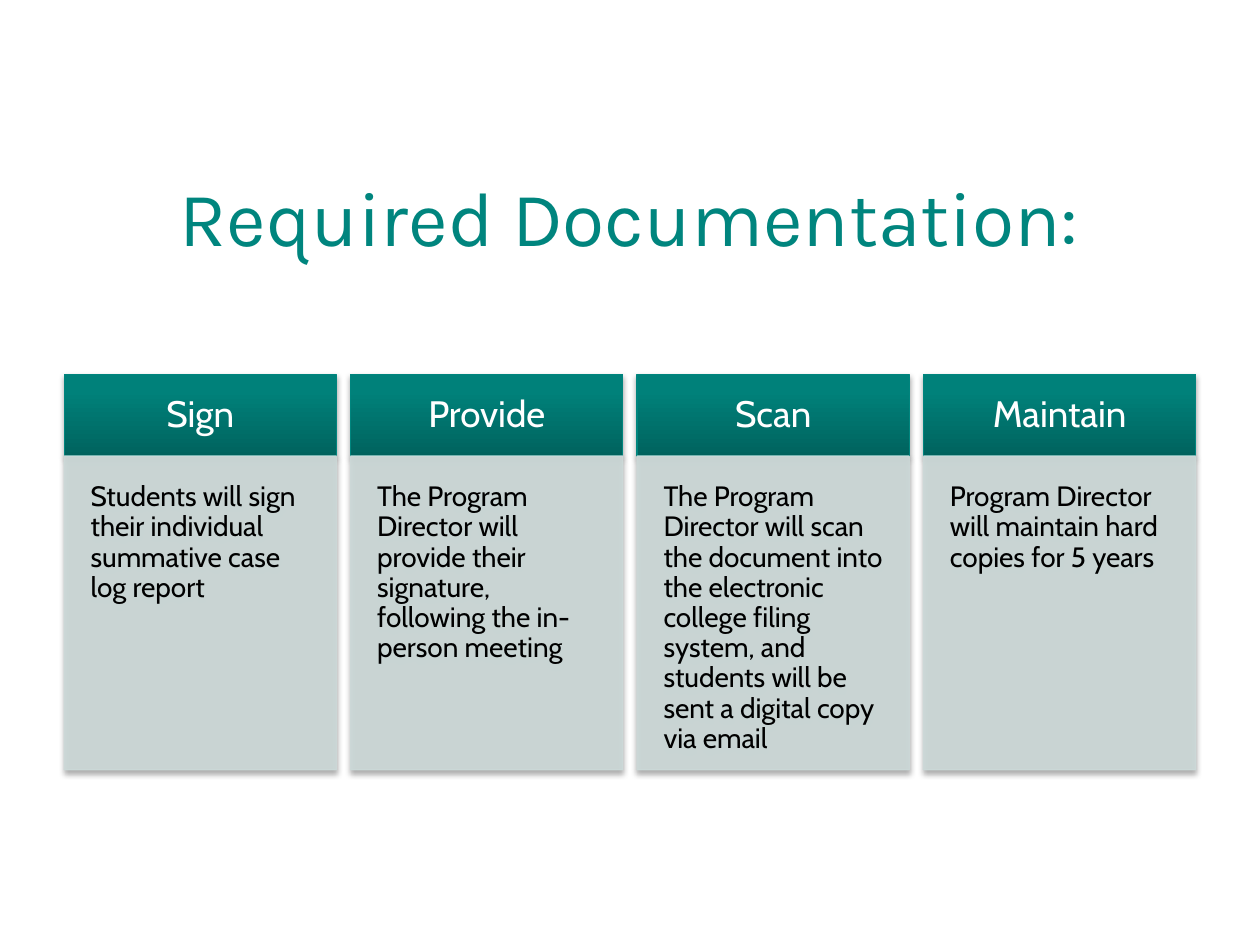
import copy

import pptx
import pptx.dml.color
import pptx.enum.shapes
import pptx.enum.text
import pptx.oxml
import pptx.oxml.ns
import pptx.util
from pptx.util import Inches

TEAL = "00857E"
PALE = "CCD9D8"
HEADER_STOPS = [(0, "00635E"), (0.8, "00817A"), (1, "00817B")]
STEPS = [
    ("Sign", "Students will sign their individual summative case log report"),
    ("Provide", "The Program Director will provide their signature, "
                "following the in-person meeting"),
    ("Scan", "The Program Director will scan the document into the electronic "
             "college filing system, and students will be sent a digital copy via email"),
    ("Maintain", "Program Director will maintain hard copies for 5 years"),
]


def rgb(hex_string):
    return pptx.dml.color.RGBColor.from_string(hex_string)


def style_text(frame, text, font, size, color, align, anchor, line_spacing=None):
    frame.text = text
    frame.word_wrap = True
    frame.vertical_anchor = anchor
    paragraph = frame.paragraphs[0]
    paragraph.alignment = align
    paragraph.line_spacing = line_spacing
    run_font = paragraph.runs[0].font
    run_font.name = font
    run_font.size = pptx.util.Pt(size)
    run_font.color.rgb = rgb(color)


def add_soft_shadow(shape):
    shape.shadow.inherit = False
    effects = shape._element.spPr.find(pptx.oxml.ns.qn("a:effectLst"))
    effects.append(pptx.oxml.parse_xml(
        f'<a:outerShdw {pptx.oxml.ns.nsdecls("a")} blurRad="40000" dist="23000" '
        'dir="5400000" rotWithShape="0"><a:srgbClr val="000000">'
        '<a:alpha val="35000"/></a:srgbClr></a:outerShdw>'))


def fill_gradient(fill, shape):
    """Run the header colours from bottom to top."""
    fill.gradient()
    fill.gradient_angle = 90
    stop_list = shape._element.spPr.find(".//" + pptx.oxml.ns.qn("a:gsLst"))
    stop_list.append(copy.deepcopy(stop_list[-1]))
    for stop, (position, color) in zip(fill.gradient_stops, HEADER_STOPS):
        stop.position = position
        stop.color.rgb = rgb(color)


def make_translucent(shape, percent):
    for color in shape._element.spPr.iter(pptx.oxml.ns.qn("a:solidFill")):
        color[0].append(pptx.oxml.parse_xml(
            f'<a:alpha {pptx.oxml.ns.nsdecls("a")} val="{percent * 1000}"/>'))


def add_panel(slide, left, top, width, height, line_color, inset):
    panel = slide.shapes.add_shape(
        pptx.enum.shapes.MSO_SHAPE.RECTANGLE, left, top, width, height)
    panel.line.color.rgb = rgb(line_color)
    panel.line.width = pptx.util.Pt(0.75)
    add_soft_shadow(panel)
    frame = panel.text_frame
    frame.margin_left = frame.margin_right = inset
    frame.margin_top = frame.margin_bottom = inset
    return panel


def add_step(slide, heading, detail, left, top, width, height):
    header_height = Inches(0.65)
    header = add_panel(slide, left, top, width, header_height, TEAL, Inches(0.17))
    fill_gradient(header.fill, header)
    style_text(header.text_frame, heading, "Cabin", 21, "FFFFFF",
               pptx.enum.text.PP_ALIGN.CENTER, pptx.enum.text.MSO_ANCHOR.MIDDLE, 0.9)

    body = add_panel(slide, left, top + header_height, width,
                     height - header_height, PALE, Inches(0.21))
    body.fill.solid()
    body.fill.fore_color.rgb = rgb(PALE)
    make_translucent(body, 90)
    style_text(body.text_frame, detail, "Cabin", 16, "000000",
               pptx.enum.text.PP_ALIGN.LEFT, pptx.enum.text.MSO_ANCHOR.TOP, 0.9)


def add_steps(slide, left, top, width, height):
    step_width = Inches(2.16)
    pitch = (width - step_width) // (len(STEPS) - 1)
    for index, (heading, detail) in enumerate(STEPS):
        add_step(slide, heading, detail, left + index * pitch,
                 top, step_width, height)


def set_title(slide, left, top, width, height):
    title = slide.shapes.title
    title.left, title.top, title.width, title.height = left, top, width, height
    style_text(title.text_frame, "Required Documentation:", "Karla", 44, TEAL,
               pptx.enum.text.PP_ALIGN.CENTER, pptx.enum.text.MSO_ANCHOR.MIDDLE)


def main():
    presentation = pptx.Presentation()
    presentation.slide_width = Inches(10)
    presentation.slide_height = Inches(7.5)
    slide = presentation.slides.add_slide(presentation.slide_layouts[5])
    set_title(slide, Inches(0.5), Inches(0.92), Inches(9), Inches(1.58))
    add_steps(slide, Inches(0.51), Inches(2.97), Inches(8.98), Inches(3.14))
    presentation.save("out.pptx")


if __name__ == "__main__":
    main()
